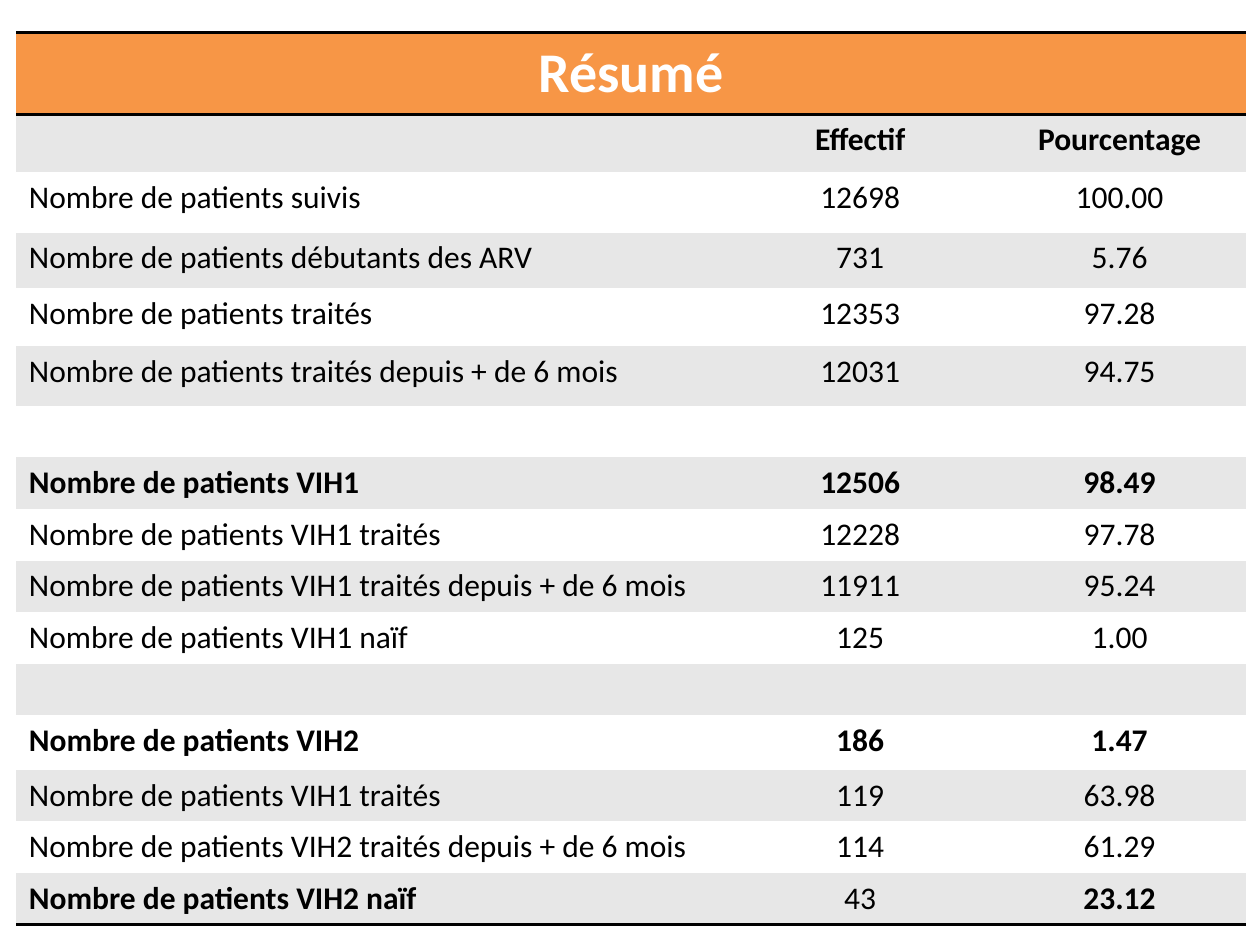
import dataclasses

import lxml.etree
import pptx
import pptx.dml.color
import pptx.enum.text
import pptx.oxml.ns
import pptx.util


@dataclasses.dataclass(frozen=True)
class Theme:
    font: str = "Calibri"
    title_size: int = 32
    body_size: int = 18
    white: str = "FFFFFF"
    black: str = "000000"
    orange: str = "F79646"
    grey: str = "E7E7E7"
    rule_width: int = 2
    plain_style: str = "{2D5ABB26-0587-4C30-8999-92F81FD0307C}"


@dataclasses.dataclass
class SummarySlide:
    """Draws tables on the current slide in one theme."""

    s: object
    theme: Theme

    def rule(self, cell, side):
        qn = pptx.oxml.ns.qn
        tc_pr = cell._tc.get_or_add_tcPr()
        width = pptx.util.Pt(self.theme.rule_width)
        ln = lxml.etree.SubElement(tc_pr, qn(f"a:ln{side}"), w=str(int(width)))
        fill = lxml.etree.SubElement(ln, qn("a:solidFill"))
        lxml.etree.SubElement(fill, qn("a:srgbClr"), val=self.theme.black)

    def cell(self, cell, text, fill, color, size, bold, centered, rules=""):
        for side in rules:
            self.rule(cell, side)
        cell.fill.solid()
        cell.fill.fore_color.rgb = pptx.dml.color.RGBColor.from_string(fill)
        p = cell.text_frame.paragraphs[0]
        if text:
            p.text = text
        if centered:
            p.alignment = pptx.enum.text.PP_ALIGN.CENTER
        p.font.name = self.theme.font
        p.font.size = pptx.util.Pt(size)
        p.font.bold = bold
        p.font.color.rgb = pptx.dml.color.RGBColor.from_string(color)

    def table(self, title, rows, left, top, widths, heights):
        cm, t = pptx.util.Cm, self.theme
        frame = self.s.shapes.add_table(
            len(rows) + 1, len(widths), cm(left), cm(top), cm(sum(widths)), cm(sum(heights)))
        tbl = frame.table
        tbl.first_row = tbl.horz_banding = False
        tbl._tbl.tblPr.find(pptx.oxml.ns.qn("a:tableStyleId")).text = t.plain_style
        for column, width in zip(tbl.columns, widths):
            column.width = cm(width)
        for row, height in zip(tbl.rows, heights):
            row.height = cm(height)
        for c in range(len(widths)):
            self.cell(tbl.cell(0, c), "" if c else title, t.orange, t.white,
                      t.title_size, True, True, "TB")
        tbl.cell(0, 0).merge(tbl.cell(0, len(widths) - 1))
        for r, (texts, bold) in enumerate(rows, 1):
            fill = t.grey if r % 2 else t.white
            rules = "B" if r == len(rows) else ""
            for c, text in enumerate(texts):
                self.cell(tbl.cell(r, c), text, fill, t.black, t.body_size,
                          bold[c], c > 0, rules)


BOLD = (True, True, True)
PLAIN = (False, False, False)
ROWS = [
    (("", "Effectif", "Pourcentage"), BOLD),
    (("Nombre de patients suivis", "12698", "100.00"), PLAIN),
    (("Nombre de patients débutants des ARV", "731", "5.76"), PLAIN),
    (("Nombre de patients traités", "12353", "97.28"), PLAIN),
    (("Nombre de patients traités depuis + de 6 mois", "12031", "94.75"), PLAIN),
    (("", "", ""), PLAIN),
    (("Nombre de patients VIH1", "12506", "98.49"), BOLD),
    (("Nombre de patients VIH1 traités", "12228", "97.78"), PLAIN),
    (("Nombre de patients VIH1 traités depuis + de 6 mois", "11911", "95.24"), PLAIN),
    (("Nombre de patients VIH1 naïf", "125", "1.00"), PLAIN),
    (("", "", ""), PLAIN),
    (("Nombre de patients VIH2", "186", "1.47"), BOLD),
    (("Nombre de patients VIH1 traités", "119", "63.98"), PLAIN),
    (("Nombre de patients VIH2 traités depuis + de 6 mois", "114", "61.29"), PLAIN),
    (("Nombre de patients VIH2 naïf", "43", "23.12"), (True, False, True)),
]
WIDTHS = [14.33, 5.36, 5.1]
HEIGHTS = [1.65, 1.16, 1.22, 1.12, 1.17, 1.2] + [1.04] * 6 + [1.1] + [1.04] * 3


def main():
    prs = pptx.Presentation()
    prs.slide_width, prs.slide_height = pptx.util.Cm(25.4), pptx.util.Cm(19.05)
    slide = SummarySlide(prs.slides.add_slide(prs.slide_layouts[6]), Theme())
    slide.table("Résumé", ROWS, 0.33, 0.66, WIDTHS, HEIGHTS)
    prs.save("out.pptx")


if __name__ == "__main__":
    main()
